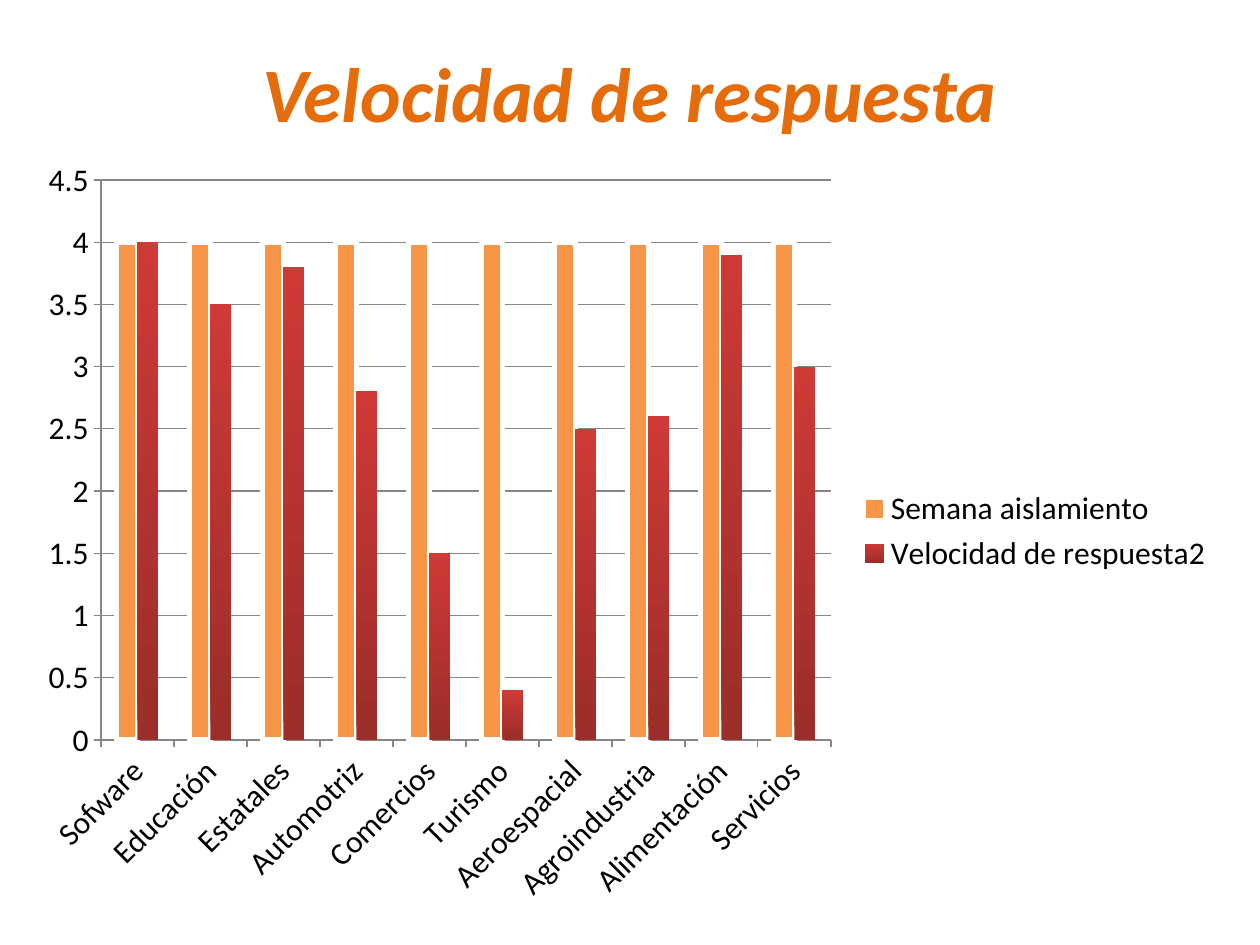
from dataclasses import dataclass

from lxml import etree
from pptx import Presentation
from pptx import util as u
from pptx.chart.data import CategoryChartData
from pptx.dml.color import RGBColor
from pptx.enum import chart as ch, text
from pptx.oxml.ns import qn


@dataclass(frozen=True)
class Theme:
    font: str = "Calibri"
    title_size: int = 44
    chart_size: int = 18
    title: str = "E46C0A"
    ink: str = "000000"
    axis: str = "868686"
    isolation: str = "F79646"
    outline: str = "FFFFFF"
    speed_top: str = "CF3A36"
    speed_bottom: str = "9B2D2A"


T = Theme()
SECTORS = ["Sofware", "Educación", "Estatales", "Automotriz", "Comercios",
           "Turismo", "Aeroespacial", "Agroindustria", "Alimentación", "Servicios"]
SPEEDS = [4, 3.5, 3.8, 2.8, 1.5, 0.4, 2.5, 2.6, 3.9, 3]


def px(n):
    return u.Emu(round(n * 914400 / 126))


def rgb(value):
    return RGBColor.from_string(value)


def set_font(font, size, color):
    font.name, font.size = T.font, u.Pt(size)
    font.color.rgb = rgb(color)


def add_title(s, box, words):
    tf = s.shapes.add_textbox(*map(px, box)).text_frame
    tf.word_wrap = True
    tf.vertical_anchor = text.MSO_ANCHOR.MIDDLE
    p = tf.paragraphs[0]
    p.text = words
    p.alignment = text.PP_ALIGN.CENTER
    set_font(p.font, T.title_size, T.title)
    p.font.bold = p.font.italic = True


def place_plot(chart, box, plot):
    area = chart._chartSpace.chart.plotArea
    for old in area.findall(qn("c:layout")):
        area.remove(old)
    layout = etree.Element(qn("c:layout"))
    area.insert(0, layout)
    manual = etree.SubElement(layout, qn("c:manualLayout"))
    x, y, w, h = plot
    parts = {"layoutTarget": "inner", "xMode": "edge", "yMode": "edge",
             "x": x / box[2], "y": y / box[3], "w": w / box[2], "h": h / box[3]}
    for tag, value in parts.items():
        etree.SubElement(manual, qn("c:" + tag)).set("val", str(value))


def style_axis(axis):
    axis.major_tick_mark = ch.XL_TICK_MARK.OUTSIDE
    axis.minor_tick_mark = ch.XL_TICK_MARK.NONE
    axis.format.line.color.rgb = rgb(T.axis)
    set_font(axis.tick_labels.font, T.chart_size, T.ink)


def add_speed_chart(s, box):
    data = CategoryChartData()
    data.categories = SECTORS
    data.add_series("Semana aislamiento", [4] * len(SECTORS))
    data.add_series("Velocidad de respuesta2", SPEEDS)
    chart = s.shapes.add_chart(ch.XL_CHART_TYPE.COLUMN_CLUSTERED, *map(px, box), data).chart
    set_font(chart.font, T.chart_size, T.ink)
    chart.has_title = False
    chart.has_legend = True
    chart.legend.position = ch.XL_LEGEND_POSITION.RIGHT
    chart.legend.include_in_layout = False
    set_font(chart.legend.font, T.chart_size, T.ink)

    for axis in (chart.category_axis, chart.value_axis):
        style_axis(axis)
    chart.category_axis._element.txPr.find(qn("a:bodyPr")).set("rot", "-2700000")
    values = chart.value_axis
    values.minimum_scale, values.maximum_scale, values.major_unit = 0, 4.5, 0.5
    values.has_major_gridlines = True
    values.major_gridlines.format.line.color.rgb = rgb(T.axis)

    plot = chart.plots[0]
    plot.gap_width, plot.overlap, plot.vary_by_categories = 150, 0, False
    isolation, speed = plot.series
    isolation.format.fill.solid()
    isolation.format.fill.fore_color.rgb = rgb(T.isolation)
    isolation.format.line.color.rgb = rgb(T.outline)
    isolation.format.line.width = u.Pt(3)
    fill = speed.format.fill
    fill.gradient()
    fill.gradient_angle = 90
    for stop, color in zip(fill.gradient_stops, (T.speed_bottom, T.speed_top)):
        stop.color.rgb = rgb(color)
    place_plot(chart, box, (76, 35, 730, 560))


def main():
    prs = Presentation()
    prs.slide_width, prs.slide_height = px(1260), px(945)
    s = prs.slides.add_slide(prs.slide_layouts[6])
    add_title(s, (63, 38, 1134, 107), "Velocidad de respuesta")
    add_speed_chart(s, (25, 145, 1201, 772))
    prs.save("out.pptx")


if __name__ == "__main__":
    main()
